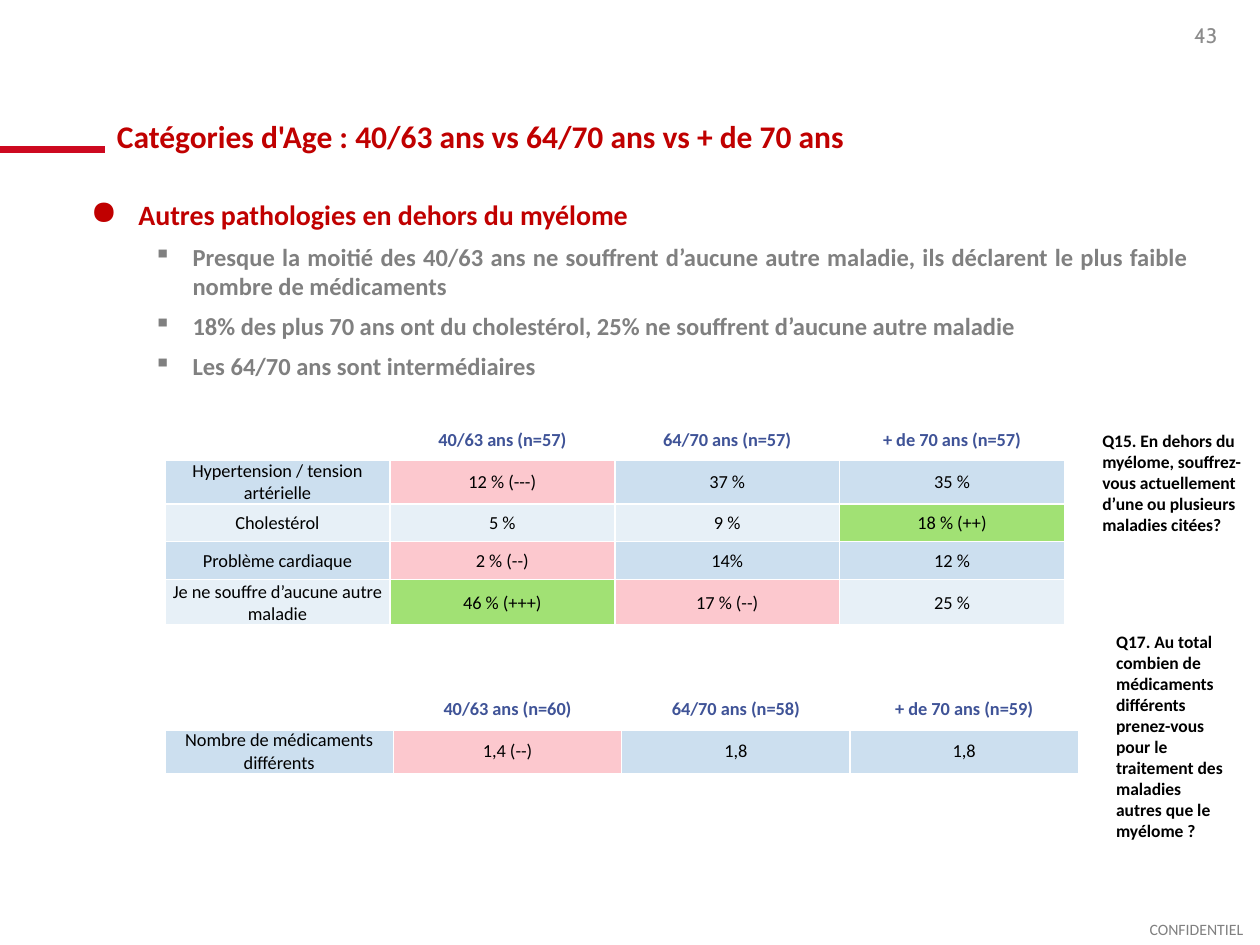
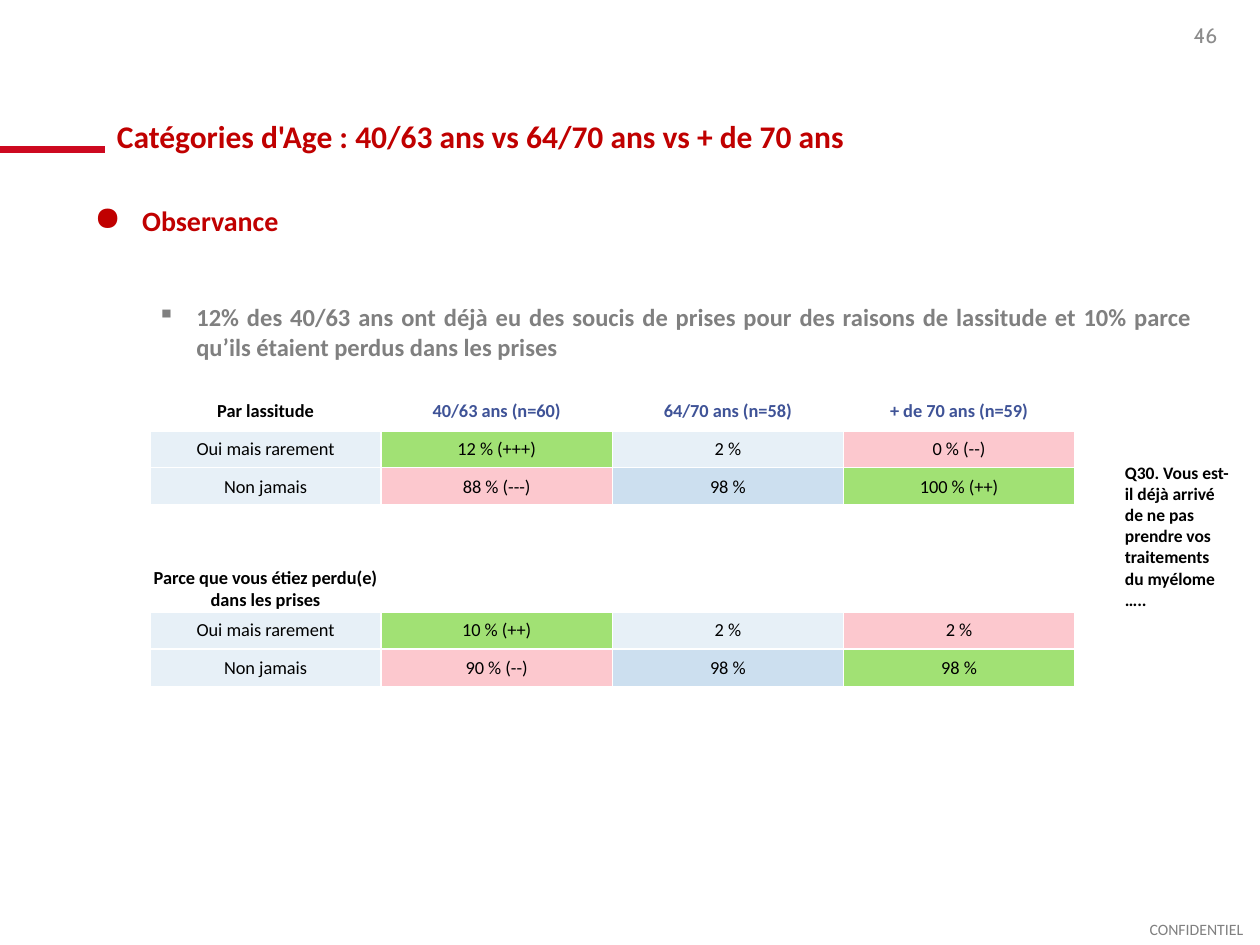
import pptx
import pptx.util
import pptx.dml.color
import pptx.enum.shapes
import pptx.enum.text
import pptx.oxml
import pptx.oxml.ns
import lxml.etree

RED = pptx.dml.color.RGBColor(0xC0, 0x00, 0x00)
BAND_RED = pptx.dml.color.RGBColor(0xCD, 0x09, 0x20)
GRAY = pptx.dml.color.RGBColor(0x80, 0x80, 0x80)
NUMBER_GRAY = pptx.dml.color.RGBColor(0x8C, 0x8C, 0x8C)
BLACK = pptx.dml.color.RGBColor(0x00, 0x00, 0x00)
HEADER_BLUE = pptx.dml.color.RGBColor(0x3F, 0x53, 0x97)
BLUE = pptx.dml.color.RGBColor(0xCC, 0xDF, 0xEF)
PALE = pptx.dml.color.RGBColor(0xE7, 0xF0, 0xF7)
PINK = pptx.dml.color.RGBColor(0xFC, 0xC8, 0xCE)
GREEN = pptx.dml.color.RGBColor(0xA1, 0xE1, 0x74)

ALIGN = pptx.enum.text.PP_ALIGN
ANCHOR = pptx.enum.text.MSO_ANCHOR
TITLE = "Catégories d'Age : 40/63 ans vs 64/70 ans vs + de 70 ans"

presentation = pptx.Presentation()
presentation.slide_width = pptx.util.Inches(10)
presentation.slide_height = pptx.util.Inches(7.5)
COLUMN = presentation.slide_width / 100
ROW = presentation.slide_height / 75


def add_box(slide, left, top, width, height, anchor=ANCHOR.TOP, wrap=True):
    shape = slide.shapes.add_textbox(
        round(left * COLUMN), round(top * ROW), round(width * COLUMN), round(height * ROW))
    shape.text_frame.word_wrap = wrap
    shape.text_frame.vertical_anchor = anchor
    return shape.text_frame.paragraphs[0]


def write(paragraph, text, size, color, bold=False, align=ALIGN.LEFT, font="Calibri"):
    paragraph.alignment = align
    run = paragraph.add_run()
    run.text = text
    run.font.name = font
    run.font.size = pptx.util.Pt(size)
    run.font.bold = bold
    run.font.color.rgb = color


pages = [
    {
        "number": "43",
        "body": (6.2, 15.2),
        "heading": "Autres pathologies en dehors du myélome",
        "first_gap": 6,
        "points": [
            "Presque la moitié des 40/63 ans ne souffrent d’aucune autre maladie, ils déclarent le plus faible nombre de médicaments",
            "18% des plus 70 ans ont du cholestérol, 25% ne souffrent d’aucune autre maladie",
            "Les 64/70 ans sont intermédiaires",
        ],
        "tables": [
            {
                "place": (13.1, 33.3, 71.4),
                "heights": [3.1, 3.6, 3, 3, 3.6],
                "header": ["", "40/63 ans (n=57)", "64/70 ans (n=57)", "+ de 70 ans (n=57)"],
                "rows": [
                    [("Hypertension / tension artérielle", BLUE), ("12 % (---)", PINK), ("37 %", BLUE), ("35 %", BLUE)],
                    [("Cholestérol", PALE), ("5 %", PALE), ("9 %", PALE), ("18 % (++)", GREEN)],
                    [("Problème cardiaque", BLUE), ("2 % (--)", PINK), ("14%", BLUE), ("12 %", BLUE)],
                    [("Je ne souffre d’aucune autre maladie", PALE), ("46 % (+++)", GREEN), ("17 % (--)", PINK), ("25 %", PALE)],
                ],
            },
            {
                "place": (13.1, 54.7, 72.5),
                "heights": [3.1, 3.6],
                "header": ["", "40/63 ans (n=60)", "64/70 ans (n=58)", "+ de 70 ans (n=59)"],
                "rows": [
                    [("Nombre de médicaments différents", BLUE), ("1,4 (--)", PINK), ("1,8", BLUE), ("1,8", BLUE)],
                ],
            },
        ],
        "questions": [
            ((86.5, 33.6, 13, 11.1), "Q15. En dehors du myélome, souffrez-vous actuellement d’une ou plusieurs maladies citées?"),
            ((87.6, 49.6, 10.8, 17.8), "Q17. Au total combien de médicaments différents prenez-vous pour le traitement des maladies autres que le myélome\u00a0?"),
        ],
    },
    {
        "number": "46",
        "body": (6.5, 15.7),
        "heading": "Observance",
        "first_gap": 37,
        "points": [
            "12% des 40/63 ans ont déjà eu des soucis de prises pour des raisons de lassitude et 10% parce qu’ils étaient perdus dans les prises",
        ],
        "tables": [
            {
                "place": (11.9, 31.1, 73.4),
                "heights": [3, 3, 3],
                "header": ["Par lassitude", "40/63 ans (n=60)", "64/70 ans (n=58)", "+ de 70 ans (n=59)"],
                "rows": [
                    [("Oui mais rarement", PALE), ("12 % (+++)", GREEN), ("2 %", PALE), ("0 % (--)", PINK)],
                    [("Non jamais", PALE), ("88 % (---)", PINK), ("98 %", BLUE), ("100 % (++)", GREEN)],
                ],
            },
            {
                "place": (11.9, 44.9, 73.4),
                "heights": [3.6, 3, 3],
                "header": ["Parce que vous étiez perdu(e) dans les prises", "", "", ""],
                "rows": [
                    [("Oui mais rarement", PALE), ("10 % (++)", GREEN), ("2 %", PALE), ("2 %", PINK)],
                    [("Non jamais", PALE), ("90 % (--)", PINK), ("98 %", BLUE), ("98 %", GREEN)],
                ],
            },
        ],
        "questions": [
            ((88.3, 36.2, 10.3, 14.5), "Q30. Vous est-il déjà arrivé de ne pas prendre vos traitements du myélome ….."),
        ],
    },
]

for page in pages:
    slide = presentation.slides.add_slide(presentation.slide_layouts[6])

    band = slide.shapes.add_connector(
        pptx.enum.shapes.MSO_CONNECTOR.STRAIGHT,
        round(8.3 * COLUMN), round(11.9 * ROW), 0, round(11.9 * ROW))
    band.line.color.rgb = BAND_RED
    band.line.width = pptx.util.Pt(4)
    lxml.etree.SubElement(band._element.spPr, pptx.oxml.ns.qn("a:effectLst"))

    write(add_box(slide, 90.2, 72.5, 9.5, 2.5, ANCHOR.MIDDLE, False),
          "CONFIDENTIEL", 9, GRAY, align=ALIGN.CENTER)
    write(add_box(slide, 74.3, 0.8, 23.3, 4, ANCHOR.MIDDLE),
          page["number"], 12, NUMBER_GRAY, align=ALIGN.RIGHT, font="Cabin")
    write(add_box(slide, 8.3, 4.8, 89.3, 8, ANCHOR.BOTTOM), TITLE, 18, RED, True)

    paragraph = add_box(slide, *page["body"], 89.1, 52.6)
    body = paragraph._parent
    entries = [(page["heading"], 16, RED, "●", 120, 0.38, 0.38, 0)]
    for index, point in enumerate(page["points"]):
        gap = 6 if index else page["first_gap"]
        entries.append((point, 14, GRAY, "▪", 100, 0.81, 0.31, gap))
    for index, (text, size, color, bullet, scale, margin, hanging, gap) in enumerate(entries):
        if index:
            paragraph = body.add_paragraph()
            paragraph.level = 1
        properties = paragraph._p.get_or_add_pPr()
        properties.set("marL", str(pptx.util.Inches(margin)))
        properties.set("indent", str(-pptx.util.Inches(hanging)))
        bullet_color = lxml.etree.SubElement(properties, pptx.oxml.ns.qn("a:buClr"))
        lxml.etree.SubElement(bullet_color, pptx.oxml.ns.qn("a:srgbClr"), val=str(color))
        lxml.etree.SubElement(properties, pptx.oxml.ns.qn("a:buSzPct"), val=str(scale * 1000))
        lxml.etree.SubElement(properties, pptx.oxml.ns.qn("a:buChar"), char=bullet)
        if gap:
            paragraph.space_before = pptx.util.Pt(gap)
        write(paragraph, text, size, color, True, ALIGN.JUSTIFY)

    for entry in page["tables"]:
        left, top, width = entry["place"]
        rows = [[(text, None) for text in entry["header"]]] + entry["rows"]
        table = slide.shapes.add_table(
            len(rows), 4, round(left * COLUMN), round(top * ROW),
            round(width * COLUMN), round(sum(entry["heights"]) * ROW)).table
        table.first_row = False
        table.horz_banding = False
        for column in table.columns:
            column.width = round(width * COLUMN / 4)
        for row_index, values in enumerate(rows):
            table.rows[row_index].height = round(entry["heights"][row_index] * ROW)
            for column_index, (text, fill) in enumerate(values):
                cell = table.cell(row_index, column_index)
                cell.vertical_anchor = ANCHOR.MIDDLE
                cell.margin_left = cell.margin_right = cell.margin_top = pptx.util.Inches(0.01)
                cell.margin_bottom = 0
                for side in "LRTB":
                    points = 3 if side == "B" and row_index == 0 else 1
                    border = lxml.etree.SubElement(
                        cell._tc.get_or_add_tcPr(), pptx.oxml.ns.qn("a:ln" + side),
                        w=str(pptx.util.Pt(points)))
                    solid = lxml.etree.SubElement(border, pptx.oxml.ns.qn("a:solidFill"))
                    lxml.etree.SubElement(solid, pptx.oxml.ns.qn("a:srgbClr"), val="FFFFFF")
                if fill is None:
                    cell.fill.background()
                else:
                    cell.fill.solid()
                    cell.fill.fore_color.rgb = fill
                paragraph = cell.text_frame.paragraphs[0]
                if text:
                    is_header = row_index == 0
                    color = HEADER_BLUE if is_header and column_index else BLACK
                    write(paragraph, text, 10.5, color, is_header, ALIGN.CENTER)
                else:
                    paragraph.font.size = pptx.util.Pt(10.5)

    for place, question in page["questions"]:
        write(add_box(slide, *place), question, 10, BLACK, True)

presentation.save("out.pptx")
